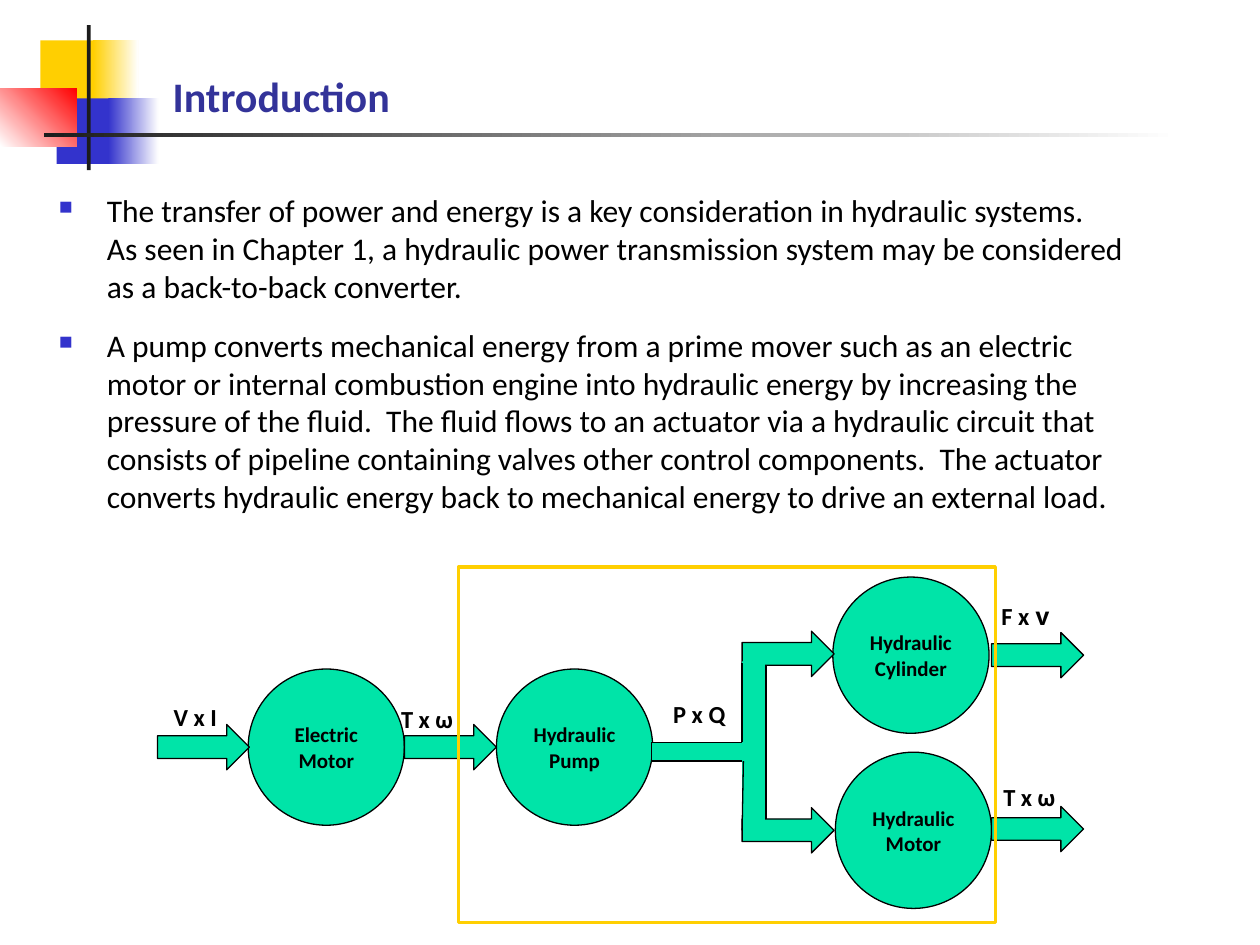
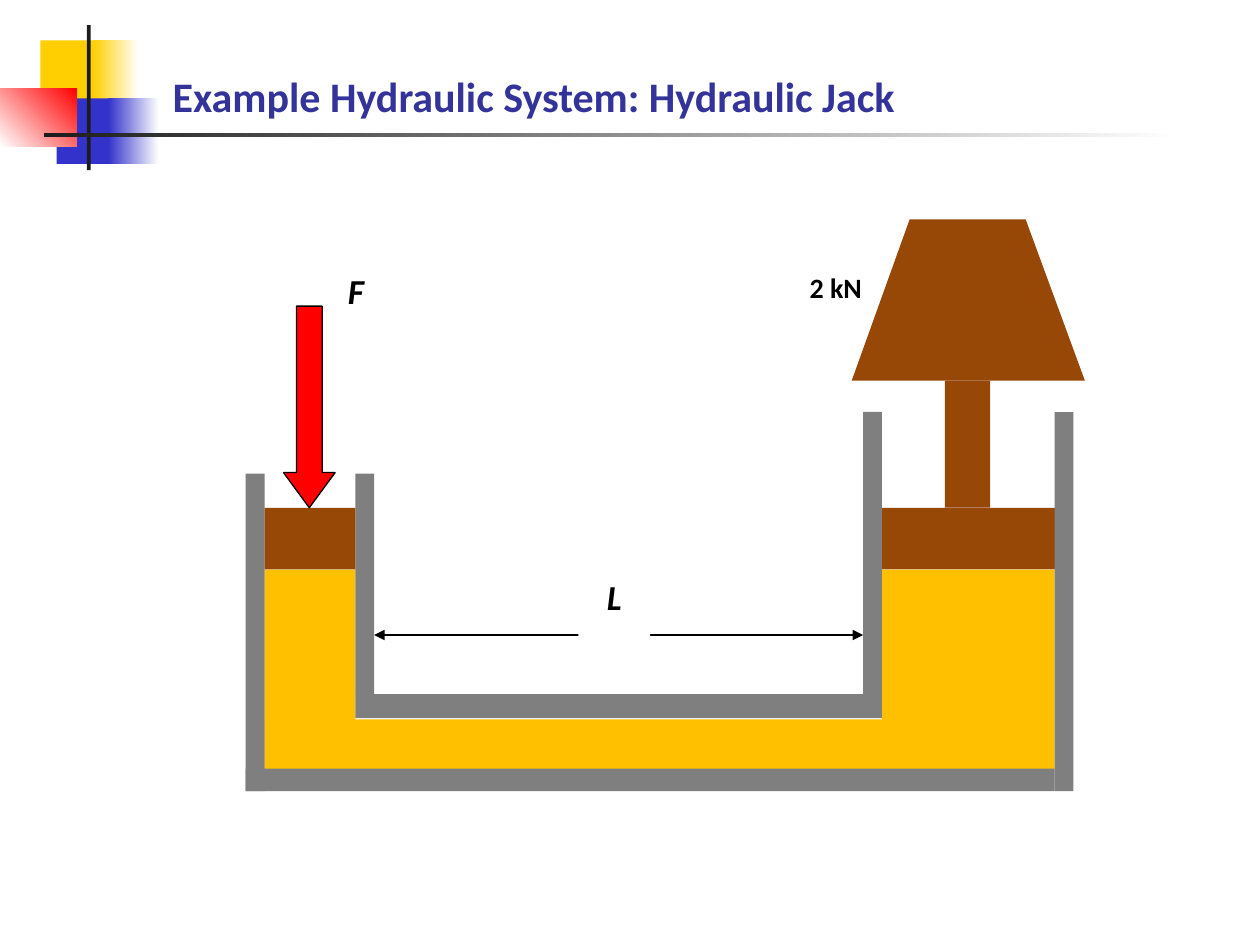
"""Build two slides on hydraulic power: an introduction and a hydraulic jack."""
from lxml import etree
from pptx import Presentation
from pptx.dml.color import RGBColor
from pptx.enum.shapes import MSO_CONNECTOR, MSO_SHAPE
from pptx.enum.text import MSO_ANCHOR, MSO_AUTO_SIZE, PP_ALIGN
from pptx.oxml.ns import qn
from pptx.util import Inches, Pt

RECT, OVAL = MSO_SHAPE.RECTANGLE, MSO_SHAPE.OVAL
RIGHT, DOWN = MSO_SHAPE.RIGHT_ARROW, MSO_SHAPE.DOWN_ARROW
TOP, MID, LOW = MSO_ANCHOR.TOP, MSO_ANCHOR.MIDDLE, MSO_ANCHOR.BOTTOM
LEFT, MIDST, END = PP_ALIGN.LEFT, PP_ALIGN.CENTER, PP_ALIGN.RIGHT
STRAIGHT, FIXED = MSO_CONNECTOR.STRAIGHT, MSO_AUTO_SIZE.NONE
FONT = "Calibri"
HUES = {
    "black": "000000", "white": "FFFFFF", "ink": "1C1C1C", "gold": "FFCF01",
    "blue": "3333CC", "title": "333399", "red": "FF0000", "green": "00E4A8",
    "oil": "FFC000", "wall": "7F7F7F", "brown": "974706",
}
RGB = {name: RGBColor.from_string(code) for name, code in HUES.items()}


def draw(slide, kind, at, fill=None, line=None, width=0.75):
    shape = slide.shapes.add_shape(kind, *map(Inches, at))
    shape.shadow.inherit = False
    if fill:
        shape.fill.solid()
        shape.fill.fore_color.rgb = RGB[fill]
    else:
        shape.fill.background()
    if line:
        shape.line.color.rgb = RGB[line]
        shape.line.width = Pt(width)
    else:
        shape.line.fill.background()
    return shape


def write(shape, text, size, align=MIDST, anchor=MID, bold=True, hue="black"):
    frame = shape.text_frame
    frame.text = text
    frame.word_wrap = True
    frame.auto_size = FIXED
    frame.vertical_anchor = anchor
    for para in frame.paragraphs:
        para.alignment = align
        for run in para.runs:
            run.font.name = FONT
            run.font.size = Pt(size)
            run.font.bold = bold
            run.font.color.rgb = RGB[hue]
    return frame


deck = Presentation()
deck.slide_width, deck.slide_height = Inches(10), Inches(7.5)

BAND = [
    ((0.32, 0.32, 0.48, 0.52), "gold", None, 0),
    ((0.74, 0.32, 0.36, 0.52), "gold", "white", 0),
    ((0.45, 0.78, 0.46, 0.52), "blue", None, 0),
    ((0.86, 0.78, 0.4, 0.52), "blue", "white", 0),
    ((0, 0.7, 0.61, 0.46), "white", "red", 45),
    ((0.69, 0.2, 0.03, 1.15), "ink", None, 0),
    ((0.35, 1.06, 9, 0.03), "ink", "white", 0),
]
for text in ("Introduction", "Example Hydraulic System: Hydraulic Jack"):
    slide = deck.slides.add_slide(deck.slide_layouts[5])
    title = slide.shapes.title
    title.left, title.top = Inches(1.27), Inches(0.33)
    title.width, title.height = Inches(8.52), Inches(0.68)
    write(title, text, 24, LEFT, LOW, hue="title")
    for at, first, last, angle in BAND:
        shape = draw(slide, RECT, at, first)
        if last:
            shape.fill.gradient()
            shape.fill.gradient_angle = angle
            for stop, hue in zip(shape.fill.gradient_stops, (first, last)):
                stop.color.rgb = RGB[hue]
intro, jack = deck.slides

POINTS = [
    "The transfer of power and energy is a key consideration in hydraulic systems.  "
    "As seen in Chapter 1, a hydraulic power transmission system may be considered "
    "as a back-to-back converter.",
    "A pump converts mechanical energy from a prime mover such as an electric motor "
    "or internal combustion engine into hydraulic energy by increasing the pressure "
    "of the fluid.  The fluid flows to an actuator via a hydraulic circuit that "
    "consists of pipeline containing valves other control components.  The actuator "
    "converts hydraulic energy back to mechanical energy to drive an external load.",
]
body = intro.shapes.add_textbox(*map(Inches, (0.37, 1.47, 8.67, 2.85)))
frame = write(body, "\n".join(POINTS), 18, LEFT, TOP, bold=False)
for para in frame.paragraphs:
    para.space_after = Pt(12)
    props = para._p.get_or_add_pPr()
    props.set("marL", str(Inches(0.38)))
    props.set("indent", str(Inches(-0.38)))
    tint = etree.SubElement(props, qn("a:buClr"))
    etree.SubElement(tint, qn("a:srgbClr"), val=HUES["blue"])
    etree.SubElement(props, qn("a:buSzPct"), val="60000")
    etree.SubElement(props, qn("a:buChar"), char="■")

STAGES = [
    ("Electric Motor", 1.97, 5.31), ("Hydraulic Pump", 3.94, 5.31),
    ("Hydraulic Cylinder", 6.61, 4.58), ("Hydraulic Motor", 6.63, 5.97),
]
for text, x, y in STAGES:
    stage = draw(intro, OVAL, (x, y, 1.24, 1.24), "green", "black")
    frame = write(stage, text, 12)
    frame.margin_left = frame.margin_right = 0
    frame.margin_top = frame.margin_bottom = 0

draw(intro, RECT, (5.17, 5.89, 0.8, 0.15), "green", "black")
FLOWS = [(1.25, 5.75), (3.21, 5.75), (7.87, 5.02), (7.87, 6.4), (5.89, 5.01), (5.89, 6.41)]
for x, y in FLOWS:
    draw(intro, RIGHT, (x, y, 0.73, 0.36), "green", "black")
draw(intro, RECT, (5.89, 5.25, 0.18, 1.27), "green")

LABELS = [
    ("V x I", 1.03, 5.46, 1.04), ("T x ω", 2.94, 5.48, 0.9), ("P x Q", 5.1, 5.44, 0.9),
    ("F x ", 7.62, 4.66, 1.04), ("T x ω", 7.72, 6.1, 0.9),
]
for text, x, y, wide in LABELS:
    label = intro.shapes.add_textbox(*map(Inches, (x, y, wide, 0.45)))
    frame = write(label, text, 14)
    frame.word_wrap = False
    frame.margin_left = frame.margin_right = 0
    frame.margin_top = frame.margin_bottom = 0
    if text == "F x ":
        run = frame.paragraphs[0].add_run()
        run.text = "v"
        run.font.name = "Noto Sans Mono"
        run.font.size = Pt(14)
        run.font.bold = True
        run.font.color.rgb = RGB["black"]
draw(intro, RECT, (3.64, 4.5, 4.26, 2.82), None, "gold", 2)

PARTS = [
    ("brown", (6.88, 4.03, 1.5, 0.49)),
    ("oil", (2.1, 5.71, 4.9, 0.4)),
    ("oil", (7, 4.52, 1.37, 1.59)),
    ("oil", (2.1, 4.52, 0.72, 1.59)),
    ("wall", (2.82, 5.51, 4.18, 0.19)),
    ("wall", (2.82, 3.76, 0.15, 1.75)),
    ("wall", (1.95, 3.76, 0.15, 2.52)),
    ("wall", (1.95, 6.1, 6.42, 0.18)),
    ("wall", (6.85, 3.27, 0.15, 2.24)),
    ("wall", (8.37, 3.27, 0.15, 3.01)),
    ("brown", (2.1, 4.03, 0.72, 0.49)),
    ("brown", (7.5, 3.02, 0.36, 1.01)),
]
for fill, at in PARTS:
    draw(jack, RECT, at, fill)
force = draw(jack, DOWN, (2.25, 2.43, 0.41, 1.6), "red", "black")
force.adjustments[0], force.adjustments[1] = 0.5, 0.68

path = jack.shapes.build_freeform(Inches(6.76), Inches(3.02))
path.add_line_segments(
    [(Inches(x), Inches(y)) for x, y in ((7.22, 1.74), (8.14, 1.74), (8.61, 3.02))])
load = path.convert_to_shape()
load.shadow.inherit = False
load.fill.solid()
load.fill.fore_color.rgb = RGB["brown"]
load.line.fill.background()

LINES = [
    (intro, 6.08, 6.5, 6.08, 5.28), (intro, 5.89, 6.59, 5.9, 6.04),
    (intro, 5.89, 5.89, 5.89, 5.26), (jack, 2.97, 5.04, 6.85, 5.04),
]
for slide, *ends in LINES:
    line = slide.shapes.add_connector(STRAIGHT, *map(Inches, ends))
    line.line.color.rgb = RGB["black"]
    line.line.width = Pt(0.75)
    etree.SubElement(line._element.spPr, qn("a:effectLst"))
    if slide is jack:
        stroke = line.line._get_or_add_ln()
        for tip in ("a:headEnd", "a:tailEnd"):
            etree.SubElement(stroke, qn(tip), type="triangle")

SIGNS = [
    ("2 kN", (5.38, 2.1, 1.56, 0.68), 16, END),
    ("L", (4.59, 4.52, 0.57, 0.77), 20, MIDST),
    ("F", (2.54, 2.09, 0.57, 0.77), 20, MIDST),
]
for text, at, size, align in SIGNS:
    if text == "L":
        sign = draw(jack, RECT, at, "white")
    else:
        sign = jack.shapes.add_textbox(*map(Inches, at))
    para = write(sign, text, size, align, TOP).paragraphs[0]
    para.space_after = Pt(10)
    para.runs[0].font.italic = text != "2 kN"

deck.save("out.pptx")
